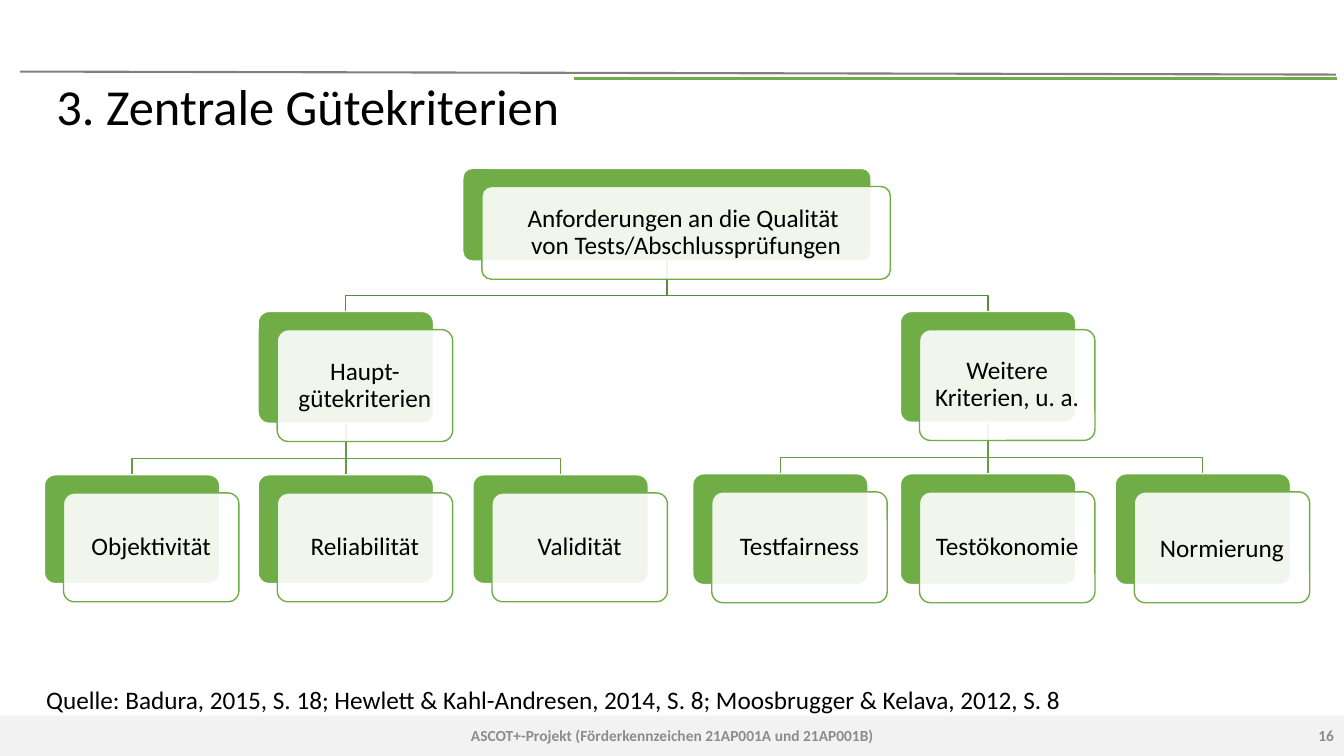
from lxml import etree
from pptx import Presentation
from pptx.dml.color import RGBColor
from pptx.enum.shapes import MSO_CONNECTOR, MSO_SHAPE
from pptx.enum.text import MSO_ANCHOR, PP_ALIGN
from pptx.oxml.ns import qn
from pptx.util import Inches, Pt

STRAIGHT = MSO_CONNECTOR.STRAIGHT
RECT, ROUNDED = MSO_SHAPE.RECTANGLE, MSO_SHAPE.ROUNDED_RECTANGLE
TOP, MIDDLE = MSO_ANCHOR.TOP, MSO_ANCHOR.MIDDLE
LEFT, CENTER, RIGHT = PP_ALIGN.LEFT, PP_ALIGN.CENTER, PP_ALIGN.RIGHT

FONT = "Calibri"
GREEN, WHITE, BLACK, GREY = "70AD47", "FFFFFF", "000000", "8C8C8C"
CARD_W = 1.74
OFFSET_X, OFFSET_Y = 0.19, 0.18
ELBOW_GAP = 0.16

ROOT = (["Anforderungen an die Qualität ", "von Tests/Abschlussprüfungen"],
        4.59, 1.67, 4.05, 0.92, 0.9)
BRANCHES = [
    ((["Haupt-gütekriterien"], 2.56, 3.09, CARD_W, 1.11, 0.9), [
        (["Objektivität"], 0.44, 4.71, CARD_W, 1.08, 0.9),
        (["Reliabilität"], 2.56, 4.71, CARD_W, 1.08, 0.9),
        (["Validität"], 4.69, 4.71, CARD_W, 1.08, 0.9),
    ]),
    ((["Weitere Kriterien, u. a."], 8.93, 3.09, CARD_W, 1.1, 0.9), [
        (["Testfairness"], 6.87, 4.7, CARD_W, 1.1, 0.9),
        (["Testökonomie"], 8.93, 4.7, CARD_W, 1.1, 0.9),
        (["Normierung"], 11.06, 4.7, CARD_W, 1.1, 1.0),
    ]),
]


def rgb(color):
    return RGBColor.from_string(color)


def write(tf, lines, size, color=BLACK, align=LEFT, anchor=MIDDLE,
          spacing=1.0, bold=False):
    tf.word_wrap = True
    tf.vertical_anchor = anchor
    p = tf.paragraphs[0]
    p.alignment = align
    p.line_spacing = spacing
    for i, line in enumerate(lines):
        if i:
            p.add_line_break()
        r = p.add_run()
        r.text = line
        r.font.name = FONT
        r.font.size = Pt(size)
        r.font.bold = bold
        r.font.color.rgb = rgb(color)


def add_text(s, box, text, size, **style):
    sp = s.shapes.add_textbox(*map(Inches, box))
    write(sp.text_frame, [text], size, **style)


def add_block(s, preset, box, fill, line=None):
    sp = s.shapes.add_shape(preset, *map(Inches, box))
    sp.shadow.inherit = False
    sp.fill.solid()
    sp.fill.fore_color.rgb = rgb(fill)
    if line:
        sp.line.color.rgb = rgb(line)
        sp.line.width = Pt(1)
    else:
        sp.line.fill.background()
    return sp


def add_line(s, start, end, color, width):
    sp = s.shapes.add_connector(STRAIGHT, *map(Inches, start + end))
    sp.line.color.rgb = rgb(color)
    sp.line.width = Pt(width)
    etree.SubElement(sp._element.spPr, qn("a:effectLst"))


def add_elbow(s, points, color):
    points = [(Inches(x), Inches(y)) for x, y in points]
    builder = s.shapes.build_freeform(*points[0])
    builder.add_line_segments(points[1:], close=False)
    sp = builder.convert_to_shape()
    sp.shadow.inherit = False
    sp.fill.background()
    sp.line.color.rgb = rgb(color)
    sp.line.width = Pt(1)


def link(s, parent, child, color):
    _, px, py, pw, ph, _ = parent
    _, cx, cy, cw, _, _ = child
    start = (px + pw / 2, py + ph)
    end = (cx + cw / 2, cy)
    if start[0] == end[0]:
        add_line(s, start, end, color, 1)
    else:
        elbow = cy - ELBOW_GAP
        add_elbow(s, [start, (start[0], elbow), (end[0], elbow), end], color)


def add_card(s, card):
    lines, x, y, w, h, spacing = card
    back = add_block(s, ROUNDED, (x, y, w, h), GREEN, WHITE)
    front = add_block(s, ROUNDED, (x + OFFSET_X, y + OFFSET_Y, w, h), WHITE, GREEN)
    for sp in (back, front):
        sp.adjustments[0] = 0.1
    color = front._element.spPr.find(qn("a:solidFill"))[0]
    etree.SubElement(color, qn("a:alpha"), val="90000")
    tf = front.text_frame
    tf.margin_left = tf.margin_right = Inches(0.1)
    tf.margin_top = tf.margin_bottom = Inches(0.1)
    write(tf, lines, 18, align=CENTER, spacing=spacing)


def add_tree(s):
    for branch, leaves in BRANCHES:
        link(s, ROOT, branch, "5A8B39")
        for leaf in leaves:
            link(s, branch, leaf, "669D40")
    add_card(s, ROOT)
    for branch, leaves in BRANCHES:
        for card in [branch] + leaves:
            add_card(s, card)


def add_title(s, text):
    sp = s.shapes.title
    sp.left, sp.top, sp.width, sp.height = map(Inches, (0.46, 0.79, 12.2, 0.59))
    write(sp.text_frame, [text], 36, spacing=0.9)


def main():
    prs = Presentation()
    prs.slide_width, prs.slide_height = Inches(13.33), Inches(7.5)
    s = prs.slides.add_slide(prs.slide_layouts[5])
    add_block(s, RECT, (0, 7.1, 13.33, 0.4), "F2F2F2")
    add_line(s, (0.2, 0.71), (13.25, 0.74), "808080", 1.5)
    add_line(s, (5.69, 0.78), (13.26, 0.78), GREEN, 2.25)
    add_tree(s)
    add_title(s, "3. Zentrale Gütekriterien")
    add_text(s, (4.42, 7.1, 4.5, 0.4),
             "ASCOT+-Projekt (Förderkennzeichen 21AP001A und 21AP001B)",
             11, color=GREY, align=CENTER, bold=True)
    add_text(s, (10.33, 7.1, 3, 0.4), "16", 11, color=GREY, align=RIGHT, bold=True)
    add_text(s, (0.36, 6.74, 12.31, 0.4),
             "Quelle: Badura, 2015, S. 18; Hewlett & Kahl-Andresen, 2014, S. 8; "
             "Moosbrugger & Kelava, 2012, S. 8", 18, anchor=TOP)
    prs.save("out.pptx")


if __name__ == "__main__":
    main()
